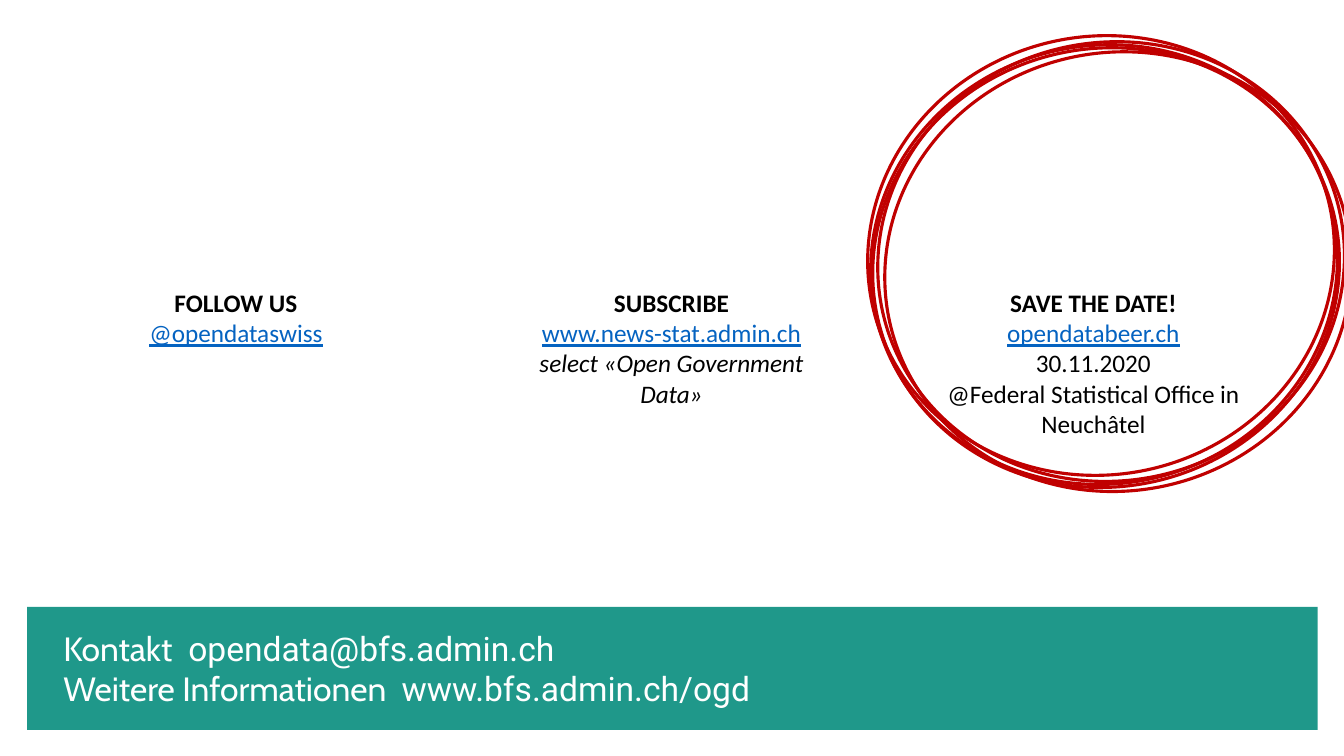
from pptx import Presentation
from pptx import util as u
from pptx.dml.color import RGBColor
from pptx.enum import shapes, text

COLORS = {
    "band": "1F988A",
    "ring": "C00000",
    "link": "0563C1",
    "ink": "000000",
    "light": "FFFFFF",
}


def color(name):
    return RGBColor.from_string(COLORS[name])


def write(para, words, *, font="Calibri", size=18, ink="ink",
          bold=False, italic=False, underline=False):
    span = para.add_run()
    span.text = words
    span.font.name = font
    span.font.size = u.Pt(size)
    span.font.color.rgb = color(ink)
    span.font.bold = bold
    span.font.italic = italic
    span.font.underline = underline


class Page:
    """Holds the deck style and the current slide."""

    def __init__(self, deck):
        self.slide = deck.slides.add_slide(deck.slide_layouts[6])

    def shape(self, kind, left, top, width, height):
        item = self.slide.shapes.add_shape(
            kind, u.Inches(left), u.Inches(top), u.Inches(width), u.Inches(height))
        item.shadow.inherit = False
        return item

    def band(self, *place):
        band = self.shape(shapes.MSO_SHAPE.RECTANGLE, *place)
        band.fill.solid()
        band.fill.fore_color.rgb = color("band")
        band.line.fill.background()

    def ring(self, left, top):
        ring = self.shape(shapes.MSO_SHAPE.OVAL, left, top, 4.64, 4.35)
        ring.rotation = 348.4
        ring.fill.background()
        ring.line.color.rgb = color("ring")
        ring.line.width = u.Pt(2.25)

    def text(self, left, top, width, height, lines, align=text.PP_ALIGN.LEFT):
        """Each line is a list of (words, format) pairs."""
        box = self.slide.shapes.add_textbox(
            u.Inches(left), u.Inches(top), u.Inches(width), u.Inches(height))
        frame = box.text_frame
        frame.word_wrap = True
        for index, line in enumerate(lines):
            para = frame.add_paragraph() if index else frame.paragraphs[0]
            para.alignment = align
            for words, style in line:
                write(para, words, **style)

    def column(self, left, width, height, title, link, *details):
        lines = [[(title, {"bold": True})],
                 [(link, {"ink": "link", "underline": True})]]
        lines += [[detail] for detail in details]
        self.text(left, 2.8, width, height, lines, text.PP_ALIGN.CENTER)


def main():
    deck = Presentation()
    deck.slide_width = u.Inches(13.33)
    deck.slide_height = u.Inches(7.5)
    page = Page(deck)

    # Contact band
    page.band(0.27, 6.02, 12.8, 1.22)
    label = {"font": "Cabin", "size": 24, "ink": "light"}
    address = {**label, "font": "Roboto"}
    page.text(0.53, 6.18, 10.74, 0.91, [
        [("Kontakt ", label), (" opendata@bfs.admin.ch", address)],
        [("Weitere Informationen  ", label), ("www.bfs.admin.ch/ogd", address)],
    ])

    # Three calls to action
    page.column(1.18, 2.32, 1.31, "FOLLOW US", "@opendataswiss")
    page.column(5.04, 3.24, 1.31, "SUBSCRIBE", "www.news-stat.admin.ch",
                ("select «Open Government Data»", {"italic": True}))
    page.column(9.21, 3.27, 1.92, "SAVE THE DATE!", "opendatabeer.ch",
                ("30.11.2020", {}),
                ("@Federal Statistical Office in Neuchâtel", {}))

    # Hand-drawn style rings around the date
    for left, top in [(8.6, 0.36), (8.7, 0.42), (8.63, 0.45),
                      (8.65, 0.48), (8.77, 0.52)]:
        page.ring(left, top)

    deck.save("out.pptx")


if __name__ == "__main__":
    main()
